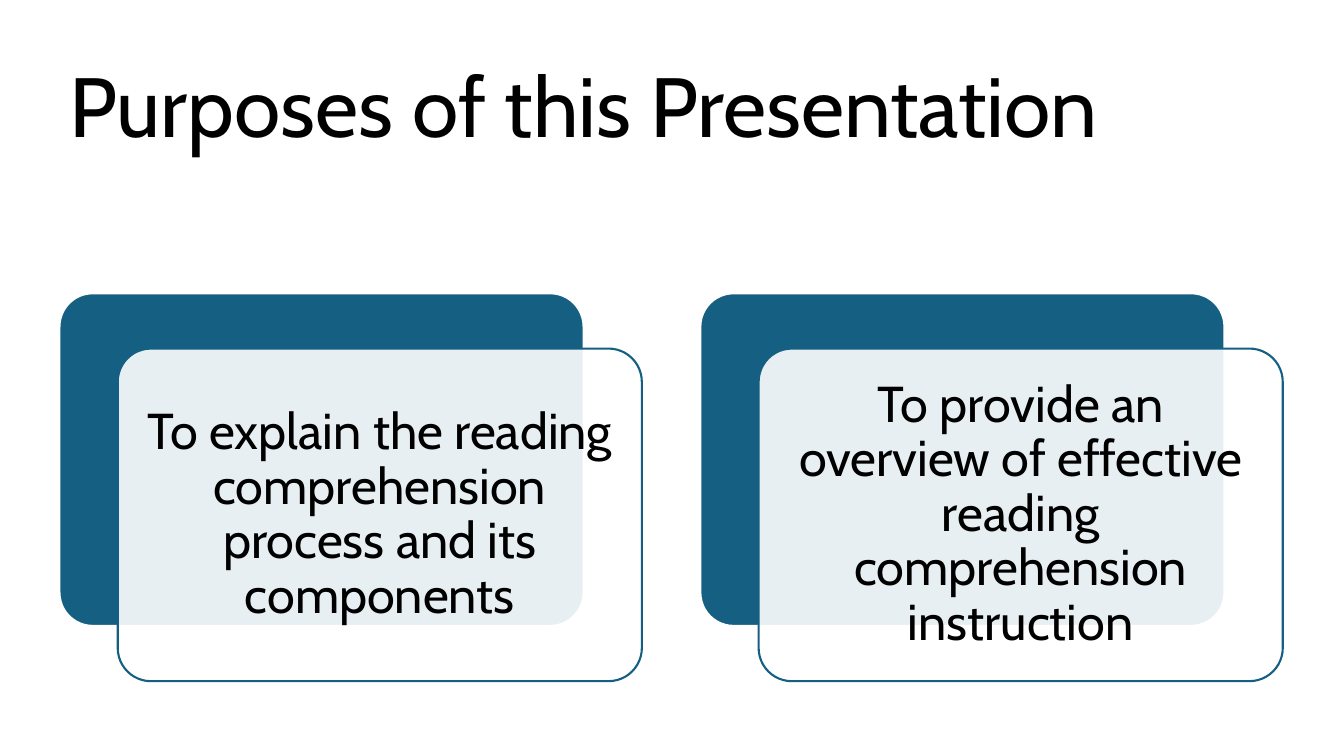
"""Build a slide that states the two purposes of a reading presentation."""
from lxml.etree import SubElement
from pptx import Presentation
from pptx.dml.color import RGBColor
from pptx.enum.shapes import MSO_SHAPE as Shape
from pptx.enum.text import MSO_ANCHOR as Anchor, PP_ALIGN as Align
from pptx.oxml.ns import qn
from pptx.util import Pt

INK = {"text": "000000", "teal": "156082", "white": "FFFFFF"}
FONT = "Cabin"
LEFT, TOP, STEP = 42.5, 209.5, 457.8
WIDE, HIGH = 374.4, 237.6
GOALS = (
    "To explain the reading comprehension process and its components",
    "To provide an overview of effective reading comprehension instruction",
)


def color(name):
    return RGBColor.from_string(INK[name])


def add_panel(slide, left, top, fill, line, alpha=None):
    panel = slide.shapes.add_shape(
        Shape.ROUNDED_RECTANGLE, Pt(left), Pt(top), Pt(WIDE), Pt(HIGH))
    panel.adjustments[0] = 0.1
    panel.shadow.inherit = False
    panel.fill.solid()
    panel.fill.fore_color.rgb = color(fill)
    panel.line.color.rgb = color(line)
    panel.line.width = Pt(1.5)
    if alpha is not None:
        tint = panel.fill._xPr.find(qn("a:solidFill"))[0]
        SubElement(tint, qn("a:alpha")).set("val", str(alpha * 1000))


def add_text(slide, text, left, top, wide, high, size, after):
    box = slide.shapes.add_textbox(Pt(left), Pt(top), Pt(wide), Pt(high))
    frame = box.text_frame
    frame.word_wrap = True
    line = frame.paragraphs[0]
    line.text = text
    line.line_spacing = 0.9
    line.space_after = Pt(after)
    line.font.name = FONT
    line.font.size = Pt(size)
    line.font.color.rgb = color("text")
    return frame


def add_goal(slide, text, left):
    add_panel(slide, left, TOP, "teal", "white")
    add_panel(slide, left + 41.6, TOP + 39.5, "white", "teal", 90)
    frame = add_text(slide, text, left + 48.6, TOP + 46.4, 360.4, 224, 36, 12.6)
    frame.vertical_anchor = Anchor.MIDDLE
    frame.margin_left = frame.margin_right = Pt(10.8)
    frame.margin_top = frame.margin_bottom = Pt(10.8)
    frame.paragraphs[0].alignment = Align.CENTER


def main():
    deck = Presentation()
    deck.slide_width, deck.slide_height = Pt(960), Pt(540)
    slide = deck.slides.add_slide(deck.slide_layouts[6])
    add_text(slide, "Purposes of this Presentation", LEFT, 42.5, 874, 142.5, 60, 6)
    for i, goal in enumerate(GOALS):
        add_goal(slide, goal, LEFT + i * STEP)
    deck.save("out.pptx")


if __name__ == "__main__":
    main()
